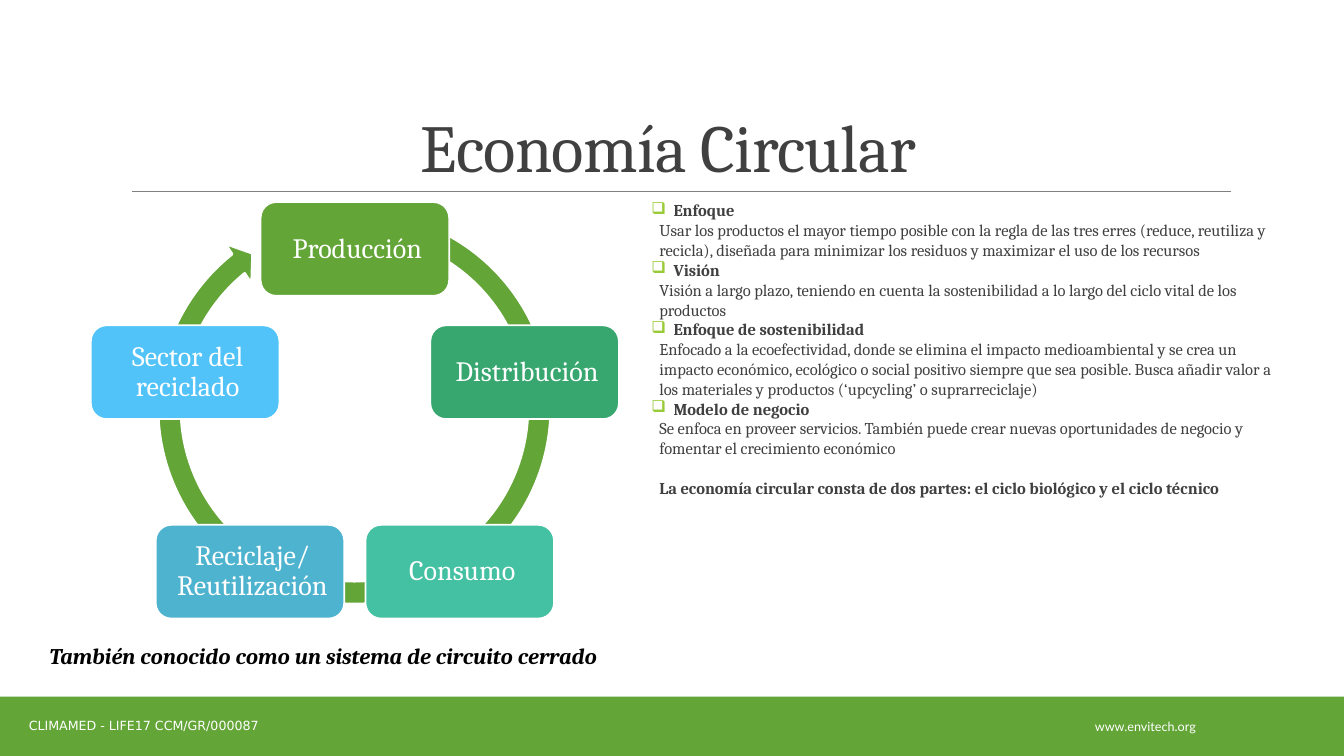
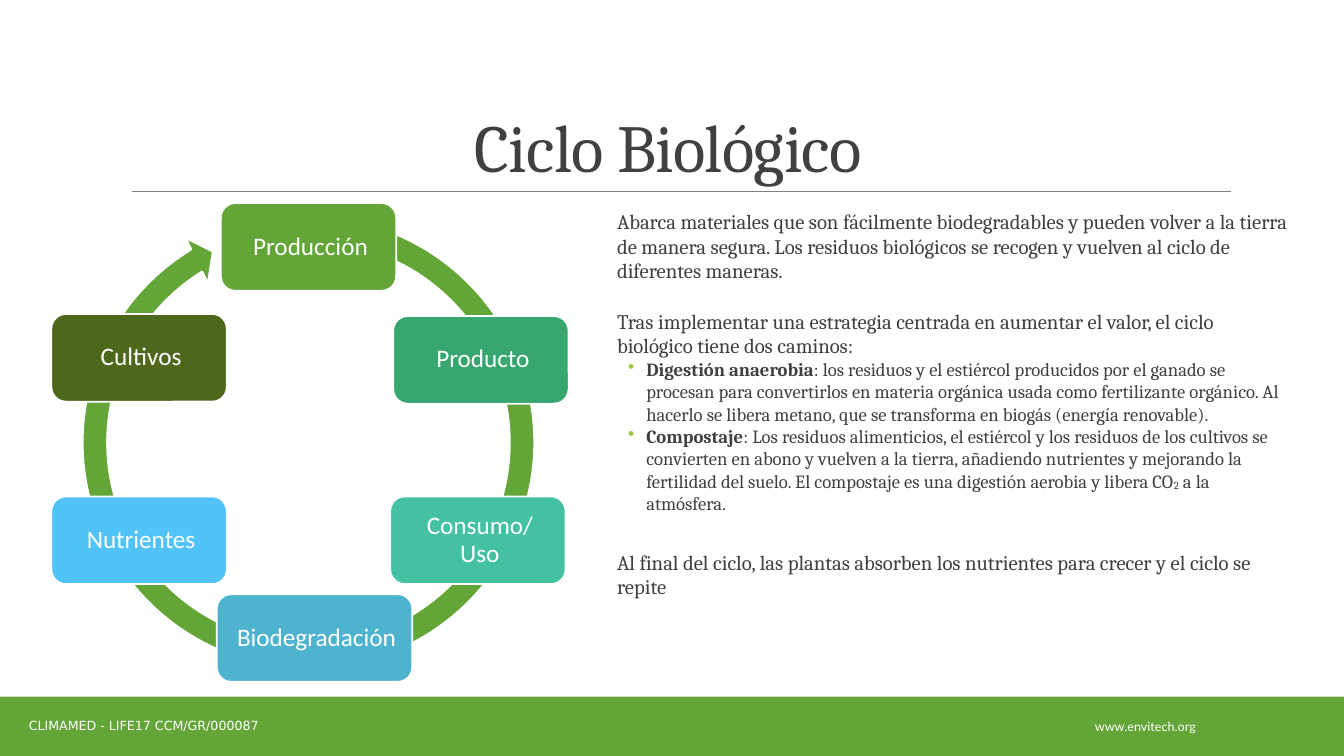
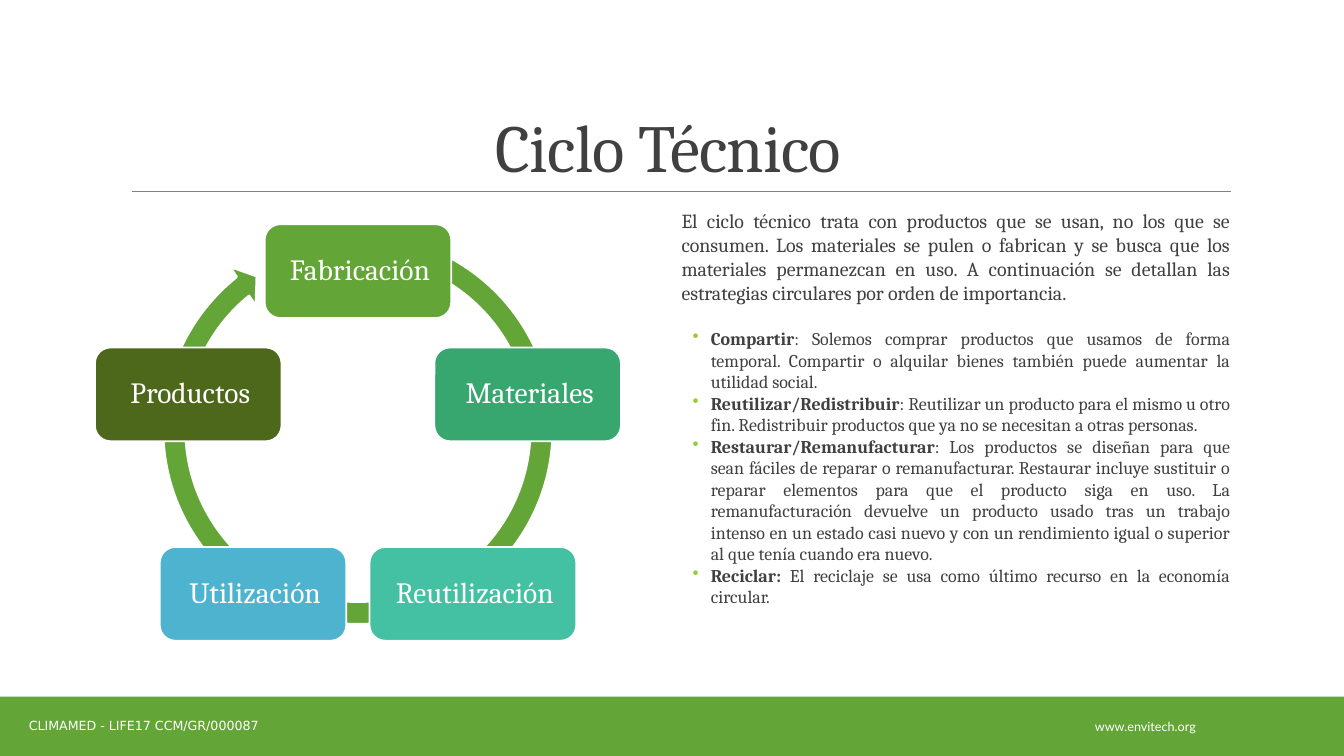
from dataclasses import dataclass
from math import cos, pi, sin

from lxml.etree import SubElement
from pptx import Presentation
from pptx.dml.color import RGBColor
from pptx.enum.shapes import MSO_CONNECTOR, MSO_SHAPE
from pptx.enum.text import MSO_ANCHOR as Anchor, PP_ALIGN as Align
from pptx.oxml.ns import qn
from pptx.shapes.autoshape import Shape
from pptx.slide import Slide
from pptx.util import Inches, Pt

COLORS = {
    "green": "63A537",
    "lime": "99CB38",
    "emerald": "37A76F",
    "turquoise": "44C1A3",
    "teal": "4EB3CF",
    "sky": "51C3F9",
    "olive": "4D671B",
    "rule": "808080",
    "ink": "404040",
    "black": "000000",
    "white": "FFFFFF",
}
SERIF = "Cambria"


@dataclass(frozen=True)
class Span:
    text: str
    bold: bool = False
    italic: bool = False
    baseline: int = 0


@dataclass(frozen=True)
class Bullet:
    char: str
    start: float


@dataclass(frozen=True)
class Para:
    spans: tuple[Span, ...]
    size: float
    indent: float = 0
    bullet: Bullet | None = None
    before: float = 0
    after: float = 0
    line_spacing: float = 1
    align: Align = Align.LEFT
    color: str = "ink"
    font: str = SERIF
    tracking: int = 0


@dataclass(frozen=True)
class Frame:
    left: float
    top: float
    width: float
    height: float


@dataclass(frozen=True)
class Node:
    label: str
    color: str
    shift_x: float = 0
    shift_y: float = 0
    extra_width: float = 0


@dataclass(frozen=True)
class Cycle:
    center_x: float
    center_y: float
    radius: float
    node_width: float
    node_height: float
    ring: Frame
    ring_adjustments: tuple[float, ...]
    font: str
    size: float
    after: float
    inset: float
    inset_right: float
    nodes: tuple[Node, ...]


@dataclass(frozen=True)
class Topic:
    title: str
    body_frame: Frame
    body: tuple[Para, ...]
    cycle: Cycle
    caption: str = ""


def rgb(name: str) -> RGBColor:
    return RGBColor.from_string(COLORS[name])


def lengths(frame: Frame) -> tuple[Inches, ...]:
    return tuple(Inches(v) for v in (frame.left, frame.top, frame.width, frame.height))


def write(shape: Shape, paras: tuple[Para, ...], anchor: Anchor = Anchor.TOP,
          insets: tuple[float, ...] = (0.1, 0.05, 0.1, 0.05)) -> None:
    text = shape.text_frame
    text.word_wrap = True
    text.vertical_anchor = anchor
    text.margin_left, text.margin_top, text.margin_right, text.margin_bottom = map(Inches, insets)
    for index, para in enumerate(paras):
        paragraph = text.add_paragraph() if index else text.paragraphs[0]
        properties = paragraph._p.get_or_add_pPr()
        properties.set("marL", str(Inches(para.indent)))
        properties.set("indent", "0")
        if para.bullet:
            properties.set("indent", str(Inches(para.bullet.start - para.indent)))
            color = SubElement(properties, qn("a:buClr"))
            SubElement(color, qn("a:srgbClr")).set("val", COLORS["lime"])
            SubElement(properties, qn("a:buChar")).set("char", para.bullet.char)
        paragraph.alignment = para.align
        paragraph.line_spacing = para.line_spacing
        paragraph.space_before = Pt(para.before)
        paragraph.space_after = Pt(para.after)
        for span in para.spans:
            run = paragraph.add_run()
            run.text = span.text
            run.font.name = para.font
            run.font.size = Pt(para.size)
            run.font.bold = span.bold
            run.font.italic = span.italic
            run.font.color.rgb = rgb(para.color)
            if span.baseline:
                run.font._element.set("baseline", str(span.baseline))
            if para.tracking:
                run.font._element.set("spc", str(para.tracking))


def add_text(page: Slide, frame: Frame, paras: tuple[Para, ...],
             anchor: Anchor = Anchor.TOP,
             insets: tuple[float, ...] = (0.1, 0.05, 0.1, 0.05)) -> None:
    write(page.shapes.add_textbox(*lengths(frame)), paras, anchor, insets)


def add_filled(page: Slide, kind: MSO_SHAPE, frame: Frame, color: str,
               outline: float = 0) -> Shape:
    shape = page.shapes.add_shape(kind, *lengths(frame))
    shape.shadow.inherit = False
    shape.fill.solid()
    shape.fill.fore_color.rgb = rgb(color)
    if outline:
        shape.line.color.rgb = rgb("white")
        shape.line.width = Pt(outline)
    else:
        shape.line.fill.background()
    return shape


def add_common(page: Slide, title: str) -> None:
    rule = page.shapes.add_connector(
        MSO_CONNECTOR.STRAIGHT, Inches(1.31), Inches(1.9), Inches(12.21), Inches(1.9))
    rule.line.color.rgb = rgb("rule")
    rule.line.width = Pt(0.5)
    SubElement(rule._element.spPr, qn("a:effectLst"))
    add_filled(page, MSO_SHAPE.RECTANGLE, Frame(0, 6.91, 13.33, 0.59), "green")
    footers = (
        ("www.envitech.org", "Lato", Frame(10.13, 7.01, 2.46, 0.4)),
        ("CLIMAMED - LIFE17 CCM/GR/000087", "DejaVu Sans", Frame(0.1, 7, 2.65, 0.4)),
    )
    for label, font, frame in footers:
        para = Para((Span(label),), 9, align=Align.CENTER, color="white", font=font)
        add_text(page, frame, (para,), Anchor.MIDDLE)
    heading = Para((Span(title + " "),), 48, line_spacing=0.85, align=Align.CENTER, tracking=-50)
    add_text(page, Frame(1.2, 0.31, 11, 1.59), (heading,), Anchor.BOTTOM)


def add_cycle(page: Slide, cycle: Cycle) -> None:
    ring = add_filled(page, MSO_SHAPE.CIRCULAR_ARROW, cycle.ring, "green", 2)
    for index, value in enumerate(cycle.ring_adjustments):
        ring.adjustments[index] = value
    insets = (cycle.inset, cycle.inset, cycle.inset_right, cycle.inset)
    for index, node in enumerate(cycle.nodes):
        angle = 2 * pi * index / len(cycle.nodes)
        frame = Frame(
            cycle.center_x + cycle.radius * sin(angle) - cycle.node_width / 2 + node.shift_x,
            cycle.center_y - cycle.radius * cos(angle) - cycle.node_height / 2 + node.shift_y,
            cycle.node_width + node.extra_width,
            cycle.node_height,
        )
        box = add_filled(page, MSO_SHAPE.ROUNDED_RECTANGLE, frame, node.color, 1.25)
        label = Para((Span(node.label),), cycle.size, after=cycle.after, line_spacing=0.9,
                     align=Align.CENTER, color="white", font=cycle.font)
        write(box, (label,), Anchor.MIDDLE, insets)


def add_topic(deck: Presentation, topic: Topic) -> None:
    page = deck.slides.add_slide(deck.slide_layouts[6])
    add_common(page, topic.title)
    add_text(page, topic.body_frame, topic.body, insets=(0, 0.05, 0, 0.05))
    add_cycle(page, topic.cycle)
    if topic.caption:
        caption = Para((Span(topic.caption, bold=True, italic=True),), 16,
                       line_spacing=1.5, color="black")
        add_text(page, Frame(0.39, 6.19, 5.99, 0.5), (caption,))


def section(heading: str, detail: str) -> tuple[Para, Para]:
    return (
        Para((Span(heading, bold=True),), 11.8, 0.22, Bullet("❑", 0)),
        Para((Span(detail),), 11.8, 0.08),
    )


def item(size: float, term: str, *rest: Span, before: float = 0,
         align: Align = Align.LEFT) -> Para:
    return Para((Span(term, bold=True), *rest), size, 0.38, Bullet("•", 0.2), before, align=align)


def strategy(term: str, detail: str, before: float = 0) -> Para:
    return item(12.8, term, Span(detail), before=before, align=Align.JUSTIFY)


CIRCULAR_ECONOMY = Topic(
    "Economía Circular",
    Frame(6.46, 1.94, 6.31, 4.9),
    (
        *section("Enfoque", "Usar los productos el mayor tiempo posible con la regla de las tres erres (reduce, reutiliza y recicla), diseñada para minimizar los residuos y maximizar el uso de los recursos"),
        *section("Visión", "Visión a largo plazo, teniendo en cuenta la sostenibilidad a lo largo del ciclo vital de los productos"),
        *section("Enfoque de sostenibilidad", "Enfocado a la ecoefectividad, donde se elimina el impacto medioambiental y se crea un impacto económico, ecológico o social positivo siempre que sea posible. Busca añadir valor a los materiales y productos (‘upcycling’ o suprarreciclaje)"),
        *section("Modelo de negocio", "Se enfoca en proveer servicios. También puede crear nuevas oportunidades de negocio y fomentar el crecimiento económico"),
        Para((Span("La economía circular consta de dos partes: el ciclo biológico y el ciclo técnico", bold=True),), 11.8, 0.08, before=14),
    ),
    Cycle(
        3.52, 4.24, 1.77, 1.87, 0.93,
        Frame(1.44, 1.97, 4.15, 4.15), (0.055, 3.307, 138.676, 173.304, 0.058),
        SERIF, 20, 7, 0.13, 0.08,
        (
            Node("Producción", "green"),
            Node("Distribución", "emerald"),
            Node("Consumo", "turquoise"),
            Node("Reciclaje/ Reutilización", "teal"),
            Node("Sector del reciclado", "sky"),
        ),
    ),
    "También conocido como un sistema de circuito cerrado",
)

BIOLOGICAL_CYCLE = Topic(
    "Ciclo Biológico",
    Frame(6.03, 2.02, 6.78, 4.85),
    (
        Para((Span("Abarca materiales que son fácilmente biodegradables y pueden volver a la tierra de manera segura. Los residuos biológicos se recogen y vuelven al ciclo de diferentes maneras."),), 14.8, 0.09),
        Para((Span("Tras implementar una estrategia centrada en aumentar el valor, el ciclo biológico tiene dos caminos:"),), 14.8, 0.09, before=18),
        item(13.3, "Digestión anaerobia", Span(": los residuos y el estiércol producidos por el ganado se procesan para convertirlos en materia orgánica usada como fertilizante orgánico. Al hacerlo se libera metano, que se transforma en biogás (energía renovable).")),
        item(
            13.3, "Compostaje",
            Span(": Los residuos alimenticios, el estiércol y los residuos de los cultivos se convierten en abono y vuelven a la tierra, añadiendo nutrientes y mejorando la fertilidad del suelo. El compostaje es una digestión aerobia y libera CO"),
            Span("2", baseline=-8000),
            Span(" a la atmósfera."),
        ),
        Para((Span("Al final del ciclo, las plantas absorben los nutrientes para crecer y el ciclo se repite"),), 14.8, 0.09, before=25),
    ),
    Cycle(
        3.06, 4.39, 1.94, 1.74, 0.87,
        Frame(0.68, 2.01, 4.76, 4.76), (0.053, 3.126, 143.01, 170.845, 0.055),
        "Calibri", 18, 6.3, 0.12, 0.08,
        (
            Node("Producción", "green"),
            Node("Producto", "emerald", 0.03, 0.15),
            Node("Consumo/ Uso", "turquoise"),
            Node("Biodegradación", "teal", -0.04, 0, 0.2),
            Node("Nutrientes", "sky"),
            Node("Cultivos", "olive", 0, 0.13),
        ),
    ),
)

TECHNICAL_CYCLE = Topic(
    "Ciclo Técnico",
    Frame(6.67, 2.02, 5.53, 4.85),
    (
        Para((Span("El ciclo técnico trata con productos que se usan, no los que se consumen. Los materiales se pulen o fabrican y se busca que los materiales permanezcan en uso. A continuación se detallan las estrategias circulares por orden de importancia."),), 14.2, 0.09, align=Align.JUSTIFY),
        strategy("Compartir", ": Solemos comprar productos que usamos de forma temporal. Compartir o alquilar bienes también puede aumentar la utilidad social.", before=17),
        strategy("Reutilizar/Redistribuir", ": Reutilizar un producto para el mismo u otro fin. Redistribuir productos que ya no se necesitan a otras personas."),
        strategy("Restaurar/Remanufacturar", ": Los productos se diseñan para que sean fáciles de reparar o remanufacturar. Restaurar incluye sustituir o reparar elementos para que el producto siga en uso. La remanufacturación devuelve un producto usado tras un trabajo intenso en un estado casi nuevo y con un rendimiento igual o superior al que tenía cuando era nuevo."),
        strategy("Reciclar: ", "El reciclaje se usa como último recurso en la economía circular."),
    ),
    Cycle(
        3.55, 4.46, 1.77, 1.85, 0.93,
        Frame(1.49, 2.2, 4.12, 4.12), (0.055, 3.307, 138.684, 173.3, 0.058),
        SERIF, 21, 7.3, 0.13, 0.09,
        (
            Node("Fabricación", "green"),
            Node("Materiales", "emerald"),
            Node("Reutilización", "turquoise", extra_width=0.2),
            Node("Utilización", "teal"),
            Node("Productos", "olive"),
        ),
    ),
)


def main() -> None:
    deck = Presentation()
    deck.slide_width = Inches(13.33)
    deck.slide_height = Inches(7.5)
    for topic in (CIRCULAR_ECONOMY, BIOLOGICAL_CYCLE, TECHNICAL_CYCLE):
        add_topic(deck, topic)
    deck.save("out.pptx")


if __name__ == "__main__":
    main()
